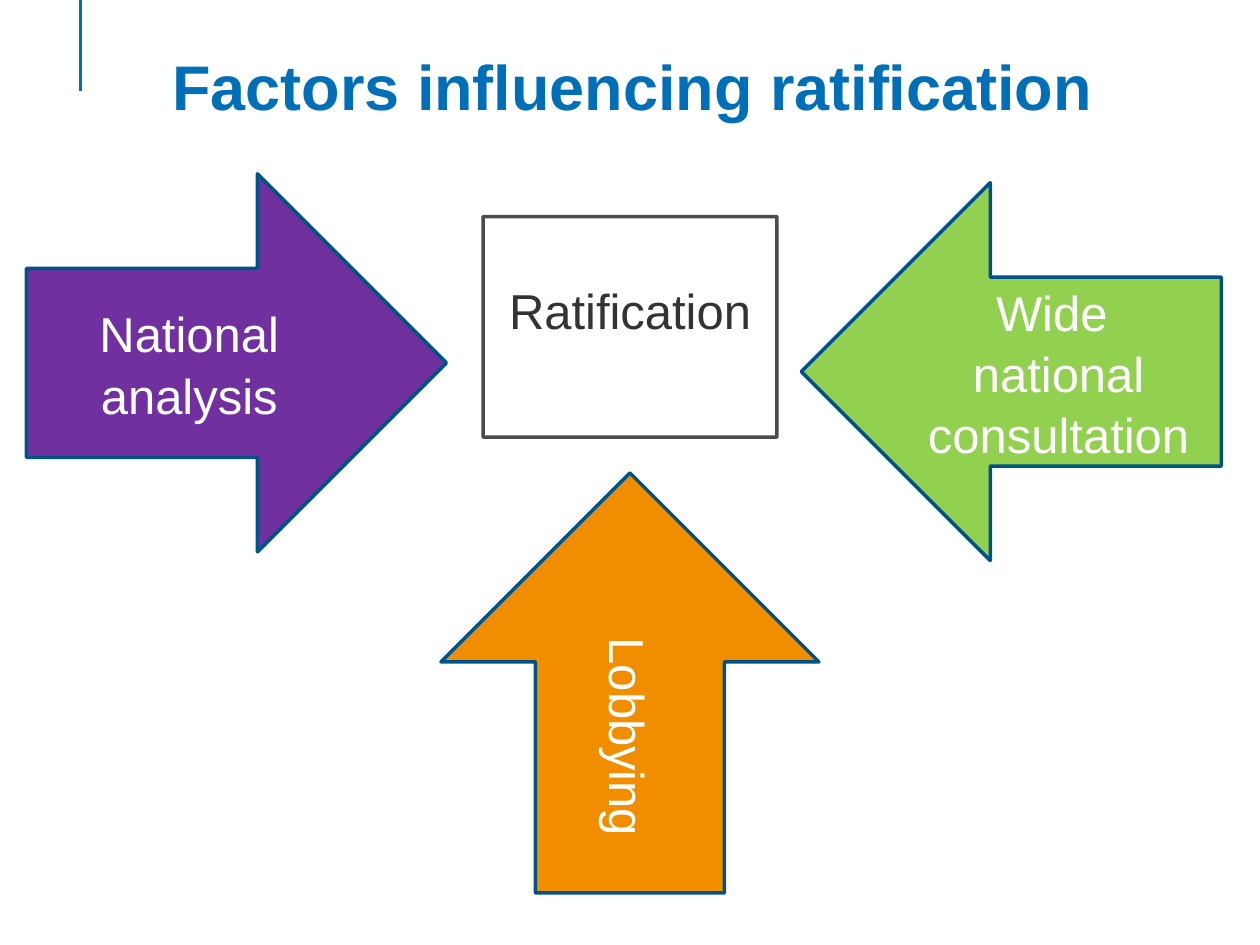
from dataclasses import dataclass

from lxml import etree
from pptx import Presentation
from pptx.dml.color import RGBColor
from pptx.enum import shapes, text
from pptx.oxml import ns
from pptx.util import Pt


@dataclass(frozen=True)
class Theme:
    font: str = "Arial"
    title_size: float = 36
    label_size: float = 28
    line_width: float = 2
    line_spacing: float = 1.04
    title: str = "006FB7"
    outline: str = "005287"
    dark: str = "333333"
    light: str = "FFFFFF"
    purple: str = "7030A0"
    green: str = "92D050"
    orange: str = "F18E00"


@dataclass(frozen=True)
class Arrow:
    lines: tuple[str, ...]
    left: float
    top: float
    fill: str
    flipped: bool = False
    rotation: float = 0


THEME = Theme()
ARROW_WIDTH, ARROW_HEIGHT = 240, 216
ARROWS = (
    Arrow(("National analysis",), 15.12, 99.36, THEME.purple),
    Arrow(("Wide ", "national consultation"), 457.92, 104.4, THEME.green, flipped=True),
    Arrow((" Lobbying",), 240, 282.24, THEME.orange, flipped=True, rotation=90),
)


def write(frame, lines: tuple[str, ...], size: float, color: str, bold: bool = False) -> None:
    frame.word_wrap = True
    for index, line in enumerate(lines):
        para = frame.paragraphs[0] if index == 0 else frame.add_paragraph()
        para.alignment = text.PP_ALIGN.CENTER
        para.line_spacing = THEME.line_spacing
        span = para.add_run()
        span.text = line
        span.font.name = THEME.font
        span.font.size = Pt(size)
        span.font.bold = bold
        span.font.color.rgb = RGBColor.from_string(color)


def style_line(line, color: str) -> None:
    line.color.rgb = RGBColor.from_string(color)
    line.width = Pt(THEME.line_width)


def add_block(page, kind, left: float, top: float, width: float, height: float, outline: str):
    """Add an unfilled shape with a round-cornered outline and middle-anchored text."""
    block = page.shapes.add_shape(kind, Pt(left), Pt(top), Pt(width), Pt(height))
    block.shadow.inherit = False
    block.fill.background()
    style_line(block.line, outline)
    etree.SubElement(block.line._ln, ns.qn("a:round"))
    block.text_frame.vertical_anchor = text.MSO_ANCHOR.MIDDLE
    return block


def add_arrow(page, arrow: Arrow) -> None:
    block = add_block(page, shapes.MSO_SHAPE.RIGHT_ARROW, arrow.left, arrow.top,
                      ARROW_WIDTH, ARROW_HEIGHT, THEME.outline)
    block.fill.solid()
    block.fill.fore_color.rgb = RGBColor.from_string(arrow.fill)
    block.rotation = arrow.rotation
    if arrow.flipped:
        block._element.spPr.find(ns.qn("a:xfrm")).set("flipH", "1")
    write(block.text_frame, arrow.lines, THEME.label_size, THEME.light)


def add_ratification_box(page) -> None:
    box = add_block(page, shapes.MSO_SHAPE.RECTANGLE, 276, 123.84, 168, 126, THEME.dark)
    color = box.line._ln.find(".//" + ns.qn("a:srgbClr"))
    etree.SubElement(color, ns.qn("a:alpha")).set("val", "87000")
    box.text_frame.margin_bottom = Pt(24)
    write(box.text_frame, ("Ratification",), THEME.label_size, THEME.dark)


def add_accent_line(page) -> None:
    accent = page.shapes.add_connector(
        shapes.MSO_CONNECTOR.STRAIGHT, Pt(46.08), Pt(0), Pt(46.08), Pt(51.84))
    style_line(accent.line, THEME.title)
    etree.SubElement(accent._element.spPr, ns.qn("a:effectLst"))


def set_title(page) -> None:
    title = page.shapes.title
    title.left, title.top, title.width, title.height = Pt(33.12), Pt(21.6), Pt(656.64), Pt(85.68)
    title.text_frame.vertical_anchor = text.MSO_ANCHOR.TOP
    title.text_frame.auto_size = text.MSO_AUTO_SIZE.NONE
    write(title.text_frame, ("Factors influencing ratification",),
          THEME.title_size, THEME.title, bold=True)


def main() -> None:
    deck = Presentation()
    deck.slide_width, deck.slide_height = Pt(720), Pt(540)
    page = deck.slides.add_slide(deck.slide_layouts.get_by_name("Title Only"))
    add_accent_line(page)
    set_title(page)
    add_ratification_box(page)
    for arrow in ARROWS:
        add_arrow(page, arrow)
    deck.save("out.pptx")


if __name__ == "__main__":
    main()
